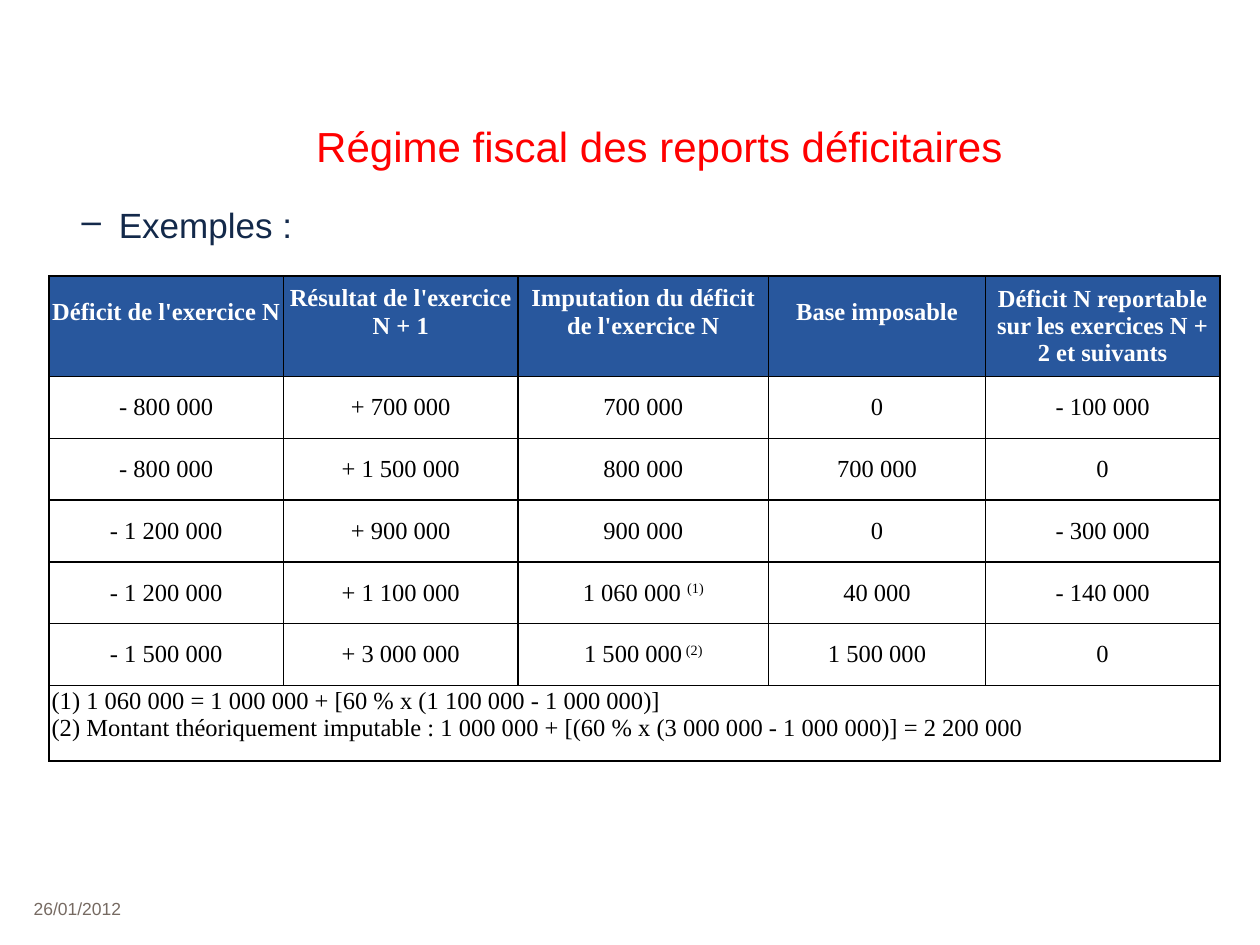
from lxml import etree
from pptx import Presentation
from pptx.dml.color import RGBColor
from pptx.enum import text as t
from pptx.oxml import ns
from pptx.util import Pt

TITLE = "Régime fiscal des reports déficitaires"
LEAD = "Exemples :"
DATE = "26/01/2012"
HEAD = ["Déficit de l'exercice N", "Résultat de l'exercice N + 1",
        "Imputation du déficit de l'exercice N", "Base imposable",
        "Déficit N reportable sur les exercices N + 2 et suivants"]
# A tuple holds a value and its superscript note mark.
ROWS = [
    ["- 800 000", "+ 700 000", "700 000", "0", "- 100 000"],
    ["- 800 000", "+ 1 500 000", "800 000", "700 000", "0"],
    ["- 1 200 000", "+ 900 000", "900 000", "0", "- 300 000"],
    ["- 1 200 000", "+ 1 100 000", ("1 060 000 ", "(1)"), "40 000", "- 140 000"],
    ["- 1 500 000", "+ 3 000 000", ("1 500 000", " (2)"), "1 500 000", "0"],
]
NOTES = ("(1) 1 060 000 = 1 000 000 + [60 % x (1 100 000 - 1 000 000)]\v"
         "(2) Montant théoriquement imputable : 1 000 000 + "
         "[(60 % x (3 000 000 - 1 000 000)] = 2 200 000")
COLS = [134, 134, 143.3, 123.8, 134]
HIGH = [57.6] + [35.3] * len(ROWS) + [43.2]
LEFT, TOP = 28, 157.6
PAD, LINE = 1.5, 16
BLUE, WHITE, BLACK = "28579D", "FFFFFF", "000000"
CENTER = t.PP_ALIGN.CENTER
MIDDLE = t.MSO_ANCHOR.MIDDLE


def color(code):
    return RGBColor.from_string(code)


def style(para, font, size, code, bold=False):
    for run in para.runs:
        run.font.name, run.font.size, run.font.bold = font, Pt(size), bold
        run.font.color.rgb = color(code)


def label(slide, box, words, size, code):
    frame = slide.shapes.add_textbox(*map(Pt, box)).text_frame
    frame.word_wrap = True
    frame.text = words
    style(frame.paragraphs[0], "Arial", size, code)
    return frame


def border(cell):
    props = cell._tc.get_or_add_tcPr()
    for side in ("lnL", "lnR", "lnT", "lnB"):
        line = etree.SubElement(props, ns.qn("a:" + side), w=str(Pt(1)))
        fill = etree.SubElement(line, ns.qn("a:solidFill"))
        etree.SubElement(fill, ns.qn("a:srgbClr"), val=BLACK)


def write(cell, value, fill=WHITE, code=BLACK, bold=False, align=CENTER):
    words, mark = value if isinstance(value, tuple) else (value, "")
    cell.text_frame.text = words
    para = cell.text_frame.paragraphs[0]
    if mark:
        run = para.add_run()
        run.text = mark
        run._r.get_or_add_rPr().set("baseline", "30000")
    para.alignment = align
    style(para, "Times New Roman", 14, code, bold)
    cell.fill.solid()
    cell.fill.fore_color.rgb = color(fill)


def build(slide):
    title = label(slide, (41.8, 48.2, 630, 53.3), TITLE, 24, "FF0000")
    title.margin_left = Pt(47)
    title.vertical_anchor = t.MSO_ANCHOR.BOTTOM
    title.paragraphs[0].alignment = CENTER

    label(slide, (12.2, 509.8, 610.6, 30.2), DATE, 10, "766A62")

    lead = label(slide, (39.6, 112.3, 652.3, 31.7), LEAD, 20, "13294A")
    lead.vertical_anchor = t.MSO_ANCHOR.BOTTOM
    lead.paragraphs[0].alignment = t.PP_ALIGN.JUSTIFY
    props = lead.paragraphs[0]._p.get_or_add_pPr()
    props.set("marL", str(Pt(21.2)))
    props.set("indent", str(-Pt(21.2)))
    etree.SubElement(props, ns.qn("a:buChar"), char="–")

    table = slide.shapes.add_table(
        len(HIGH), len(COLS), Pt(LEFT), Pt(TOP),
        Pt(sum(COLS)), Pt(sum(HIGH))).table
    table.horz_banding = False
    for col, wide in zip(table.columns, COLS):
        col.width = Pt(wide)
    for row, high in zip(table.rows, HIGH):
        row.height = Pt(high)
    for cell in table.iter_cells():
        border(cell)
        cell.margin_left = cell.margin_right = Pt(PAD)
        cell.margin_top = cell.margin_bottom = Pt(PAD)
        cell.vertical_anchor = MIDDLE

    for c, words in enumerate(HEAD):
        cell = table.cell(0, c)
        write(cell, words, BLUE, WHITE, True)
        if c < len(HEAD) - 1:
            cell.margin_bottom = Pt(PAD + LINE)
    for r, row in enumerate(ROWS, 1):
        for c, value in enumerate(row):
            write(table.cell(r, c), value)
    last = len(HIGH) - 1
    foot = table.cell(last, 0)
    foot.merge(table.cell(last, len(COLS) - 1))
    foot.vertical_anchor = t.MSO_ANCHOR.TOP
    write(foot, NOTES, align=t.PP_ALIGN.LEFT)


def main():
    deck = Presentation()
    deck.slide_width, deck.slide_height = Pt(720), Pt(540)
    build(deck.slides.add_slide(deck.slide_layouts[6]))
    deck.save("out.pptx")


if __name__ == "__main__":
    main()
